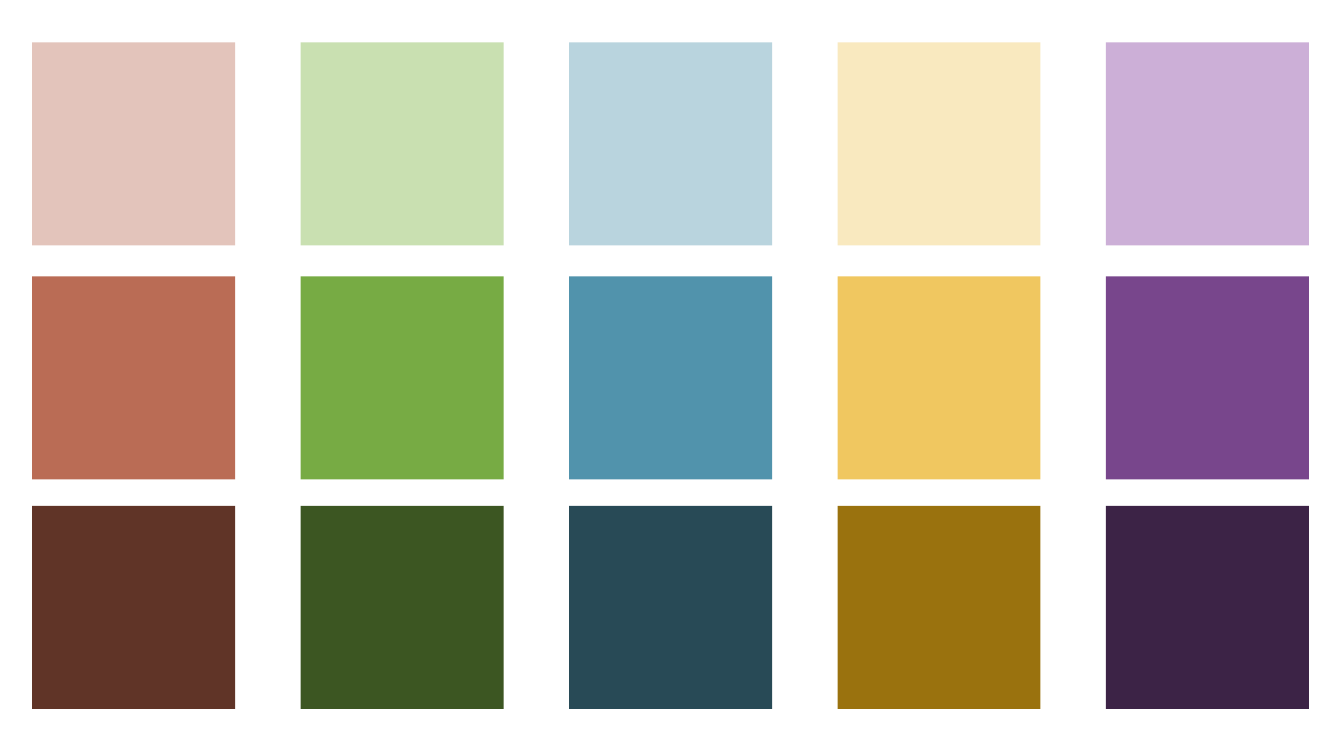
from pptx import Presentation
from pptx.dml.color import RGBColor
from pptx.enum.shapes import MSO_SHAPE
from pptx.util import Pt

# Columns: terracotta, green, blue, yellow, purple
COLORS = {
    "mid": ["BA6C55", "77AB44", "5193AC", "F0C760", "78468C"],
    "light": ["E3C4BB", "C9E0B1", "B9D4DE", "F9E9BF", "CCAFD7"],
    "dark": ["603427", "3C5622", "284A56", "9A720E", "3C2346"],
}
ROW_TOPS = {"light": 30.3, "mid": 197.4, "dark": 361.4}
LEFT, PITCH, SIDE = 23, 191.75, 145


def add_swatch(slide, left, top, color):
    sp = slide.shapes.add_shape(
        MSO_SHAPE.RECTANGLE, Pt(left), Pt(top), Pt(SIDE), Pt(SIDE))
    sp.shadow.inherit = False
    sp.fill.solid()
    sp.fill.fore_color.rgb = RGBColor.from_string(color)
    sp.line.fill.background()


def main():
    prs = Presentation()
    prs.slide_width, prs.slide_height = Pt(960), Pt(540)
    slide = prs.slides.add_slide(prs.slide_layouts[6])
    for shade, row in COLORS.items():
        for col, color in enumerate(row):
            add_swatch(slide, LEFT + col * PITCH, ROW_TOPS[shade], color)
    prs.save("out.pptx")


if __name__ == "__main__":
    main()
